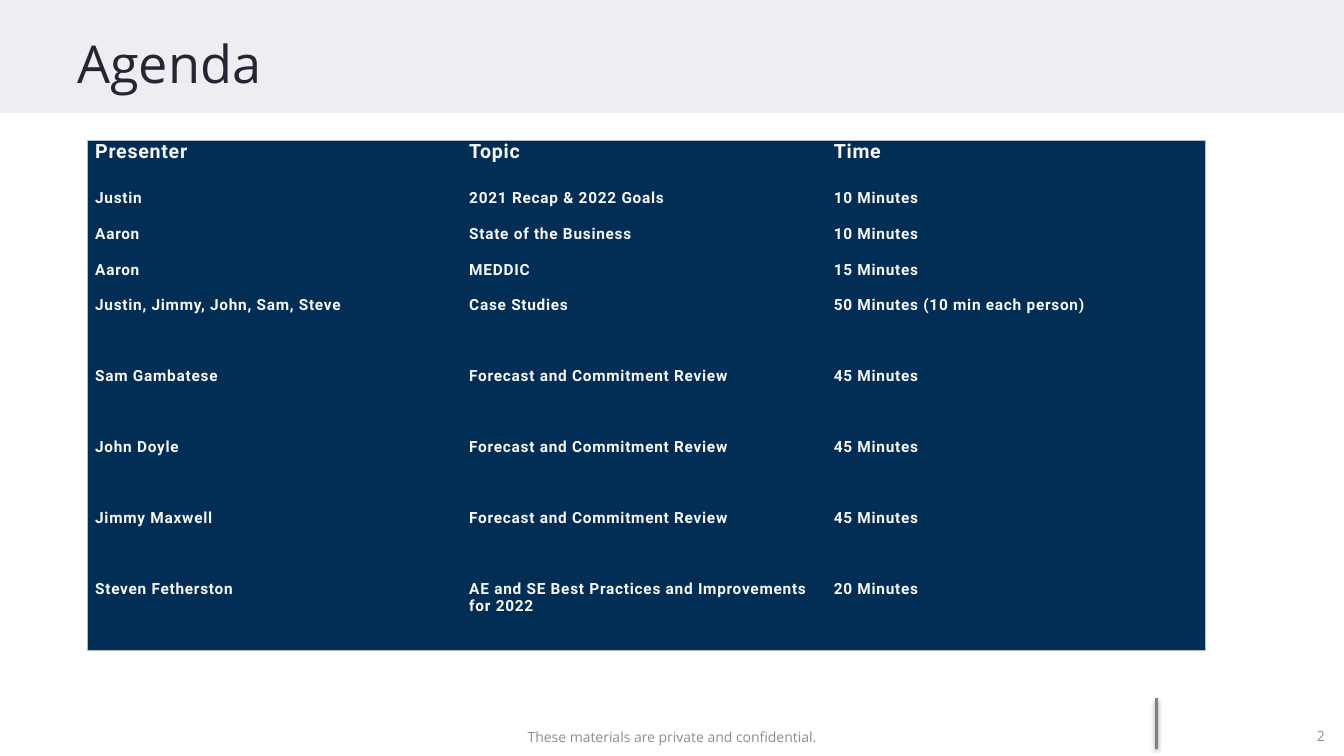
from lxml import etree
from pptx import Presentation
from pptx.dml.color import RGBColor
from pptx.enum.shapes import MSO_CONNECTOR, MSO_SHAPE
from pptx.enum.text import MSO_ANCHOR, PP_ALIGN
from pptx.oxml import parse_xml
from pptx.oxml.ns import nsdecls, qn
from pptx.util import Pt

RECT = MSO_SHAPE.RECTANGLE
STRAIGHT = MSO_CONNECTOR.STRAIGHT
MIDDLE = MSO_ANCHOR.MIDDLE
LEFT, CENTER, RIGHT = PP_ALIGN.LEFT, PP_ALIGN.CENTER, PP_ALIGN.RIGHT

PALE = RGBColor(0xE7, 0xE7, 0xED)
INK = RGBColor(0x25, 0x25, 0x33)
GRAY = RGBColor(0x8E, 0x8E, 0x90)
RULE = RGBColor(0x80, 0x80, 0x80)
EDGE = RGBColor(0xB9, 0xBA, 0xBE)
NAVY = RGBColor(0x02, 0x2D, 0x55)
LIGHT = RGBColor(0xF8, 0xF8, 0xF8)

WIDE, HIGH = 960, 540
INSET = 5.2
COLS = [267.2, 265.6, 265.6]
ROWS = [35.3] + [25.4] * 3 + [50.6] * 5
AGENDA = [
    ("Presenter", "Topic", "Time"),
    ("Justin", "2021 Recap & 2022 Goals", "10 Minutes"),
    ("Aaron", "State of the Business", "10 Minutes"),
    ("Aaron", "MEDDIC", "15 Minutes"),
    ("Justin, Jimmy, John, Sam, Steve", "Case Studies",
     "50 Minutes (10 min each person)"),
    ("Sam Gambatese", "Forecast and Commitment Review", "45 Minutes"),
    ("John Doyle", "Forecast and Commitment Review", "45 Minutes"),
    ("Jimmy Maxwell", "Forecast and Commitment Review", "45 Minutes"),
    ("Steven Fetherston",
     "AE and SE Best Practices and Improvements for 2022", "20 Minutes"),
]


def write(frame, text, size=10, color=GRAY, font="Open Sans", bold=False,
          align=LEFT, track=0):
    """Put one formatted run of text in a frame."""
    para = frame.paragraphs[0]
    para.alignment = align
    run = para.add_run()
    run.text = text
    run.font.size = Pt(size)
    run.font.name = font
    run.font.bold = bold
    run.font.color.rgb = color
    if track:
        run.font._element.set("spc", str(int(track * 100)))


def place(shape, left, top, width, height):
    """Move a shape to a box given in points."""
    shape.left, shape.top = Pt(left), Pt(top)
    shape.width, shape.height = Pt(width), Pt(height)


def header(slide, left, top, width, height):
    """Draw the pale band and the slide title on it."""
    band = slide.shapes.add_shape(RECT, Pt(left), Pt(top), Pt(width), Pt(height))
    band.shadow.inherit = False
    band.line.fill.background()
    band.fill.solid()
    band.fill.fore_color.rgb = PALE
    tint = band._element.spPr.find(".//" + qn("a:srgbClr"))
    etree.SubElement(tint, qn("a:alpha"), val="70000")
    title = slide.shapes.title
    band._element.addnext(title._element)
    place(title, left + 48, top + 15.1, width - 96, 59)
    title.text_frame.vertical_anchor = MIDDLE
    write(title.text_frame, "Agenda", size=37.3, color=INK)


def border(cell, sides):
    """Draw the named sides of a cell and clear the others."""
    props = cell._tc.get_or_add_tcPr()
    for side in "LRTB":
        line = etree.SubElement(props, qn("a:ln" + side), w=str(Pt(0.75)))
        if side in sides:
            fill = etree.SubElement(line, qn("a:solidFill"))
            etree.SubElement(fill, qn("a:srgbClr"), val=str(EDGE))
        else:
            etree.SubElement(line, qn("a:noFill"))


def agenda(slide, left, top):
    """Build the agenda table with an outer border only."""
    table = slide.shapes.add_table(
        len(ROWS), len(COLS), Pt(left), Pt(top), Pt(sum(COLS)), Pt(sum(ROWS))).table
    table.horz_banding = False
    for col, width in zip(table.columns, COLS):
        col.width = Pt(width)
    for row, height in zip(table.rows, ROWS):
        row.height = Pt(height)
    for r, texts in enumerate(AGENDA):
        for c, text in enumerate(texts):
            cell = table.cell(r, c)
            sides = {"L": c == 0, "R": c == len(COLS) - 1,
                     "T": r == 0, "B": r == len(ROWS) - 1}
            border(cell, [side for side, shown in sides.items() if shown])
            cell.fill.solid()
            cell.fill.fore_color.rgb = NAVY
            pad = 0 if sides["R"] else INSET
            cell.margin_left = cell.margin_right = Pt(pad)
            cell.margin_top = cell.margin_bottom = 0
            write(cell.text_frame, text, size=11 if r else 14, color=LIGHT,
                  font="Roboto", bold=True, track=0.5)


def note(slide, text, align, left, top, width, height):
    """Add one small gray footer text."""
    box = slide.shapes.add_textbox(Pt(left), Pt(top), Pt(width), Pt(height))
    box.text_frame.word_wrap = True
    box.text_frame.vertical_anchor = MIDDLE
    write(box.text_frame, text, align=align)


def footer(slide, left, top, width):
    """Draw the shaded rule, the notice and the page number."""
    x = left + width - 134
    rule = slide.shapes.add_connector(STRAIGHT, Pt(x), Pt(top), Pt(x), Pt(top + 36.7))
    rule.line.color.rgb = RULE
    rule.line.width = Pt(2)
    rule._element.spPr.append(parse_xml(
        f'<a:effectLst {nsdecls("a")}><a:outerShdw blurRad="{Pt(3.1)}" '
        f'dist="{Pt(1.6)}" dir="5400000" rotWithShape="0"><a:srgbClr val="000000">'
        '<a:alpha val="38000"/></a:srgbClr></a:outerShdw></a:effectLst>'))
    note(slide, "These materials are private and confidential.", CENTER,
         left + (width - 304) / 2, top + 13.7, 304, 28.8)
    note(slide, "2", RIGHT, left + width - 230.6, top + 13, 224, 28.8)


def main():
    """Build and save the agenda slide."""
    deck = Presentation()
    deck.slide_width, deck.slide_height = Pt(WIDE), Pt(HIGH)
    slide = deck.slides.add_slide(deck.slide_layouts[5])
    header(slide, 0, 0, WIDE, 80.6)
    agenda(slide, 62.8, 100.2)
    footer(slide, 0, 498.3, WIDE)
    deck.save("out.pptx")


if __name__ == "__main__":
    main()
